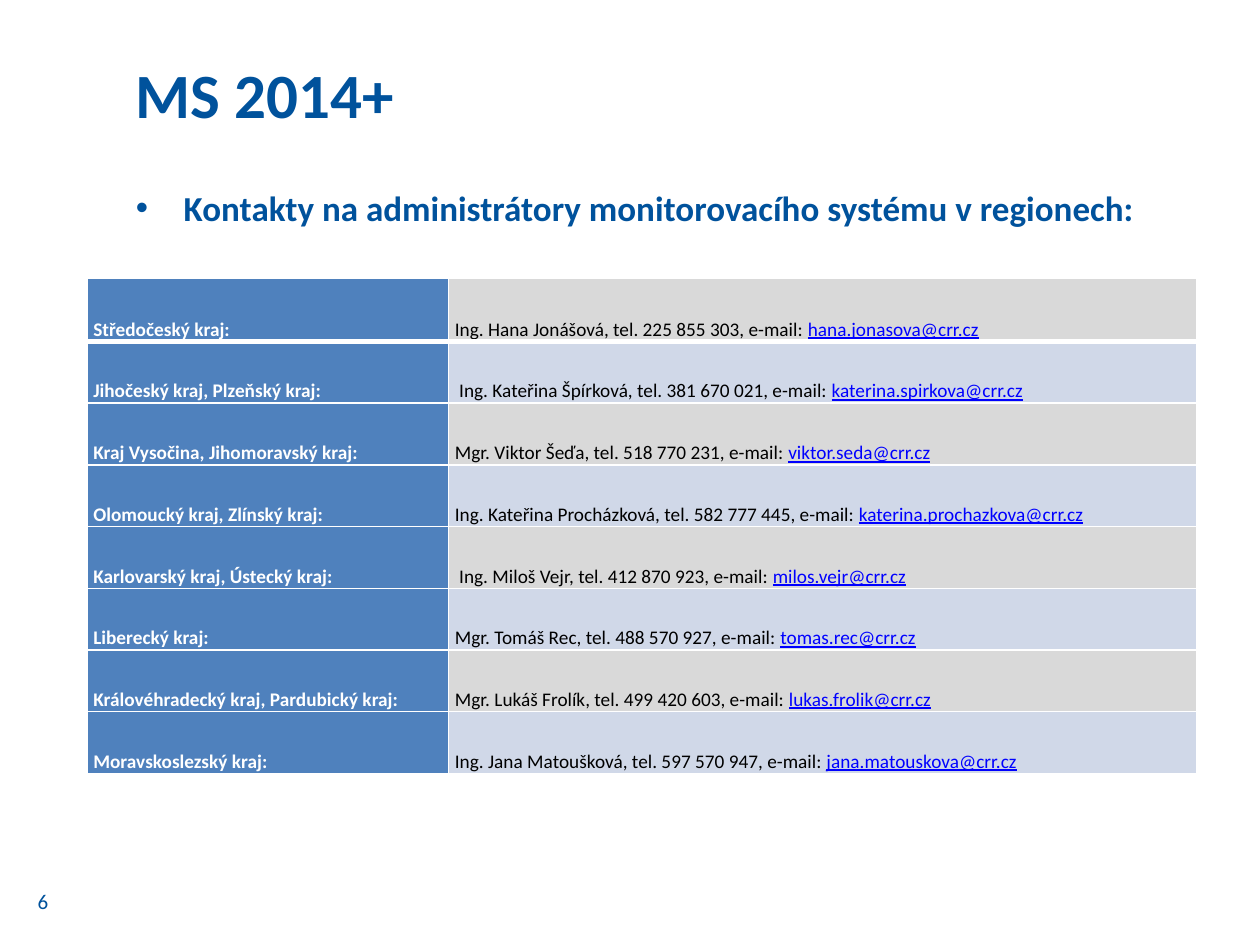
from lxml import etree
from pptx import Presentation, util as u
from pptx.dml.color import RGBColor
from pptx.enum import text
from pptx.oxml.ns import qn

BLUE, WHITE, BLACK, LINK = "00529C", "FFFFFF", "000000", "0000FF"
HEAD_FILL, BANDS = "4F81BD", ("D9D9D9", "D0D8E8")
TITLE = "MS 2014+"
LEAD = "Kontakty na administrátory monitorovacího systému v regionech:"
PAGE_NUMBER = "6"
CONTACTS = [
    ("Středočeský kraj:", "Ing. Hana Jonášová, tel. 225 855 303", "hana.jonasova@crr.cz"),
    ("Jihočeský kraj, Plzeňský kraj:", " Ing. Kateřina Špírková, tel. 381 670 021", "katerina.spirkova@crr.cz"),
    ("Kraj Vysočina, Jihomoravský kraj:", "Mgr. Viktor Šeďa, tel. 518 770 231", "viktor.seda@crr.cz"),
    ("Olomoucký kraj, Zlínský kraj:", "Ing. Kateřina Procházková, tel. 582 777 445", "katerina.prochazkova@crr.cz"),
    ("Karlovarský kraj, Ústecký kraj:", " Ing. Miloš Vejr, tel. 412 870 923", "milos.vejr@crr.cz"),
    ("Liberecký kraj:", "Mgr. Tomáš Rec, tel. 488 570 927", "tomas.rec@crr.cz"),
    ("Královéhradecký kraj, Pardubický kraj:", "Mgr. Lukáš Frolík, tel. 499 420 603", "lukas.frolik@crr.cz"),
    ("Moravskoslezský kraj:", "Ing. Jana Matoušková, tel. 597 570 947", "jana.matouskova@crr.cz"),
]
COLUMNS = (2.87, 5.94)
FIRST_ROW, ROW = 0.5, 0.49


def color(value):
    return RGBColor.from_string(value)


def write(para, words, size=11, fill=BLACK, bold=False, underline=False):
    span = para.add_run()
    span.text = words
    font = span.font
    font.name, font.size, font.bold = "Calibri", u.Pt(size), bold
    font.underline = underline
    font.color.rgb = color(fill)


def add_box(page, left, top, width, height, anchor):
    box = page.shapes.add_textbox(*map(u.Inches, (left, top, width, height)))
    box.text_frame.word_wrap = True
    box.text_frame.vertical_anchor = anchor
    return box.text_frame.paragraphs[0]


def add_bullet(para, indent):
    props = para._p.get_or_add_pPr()
    props.set("marL", str(u.Inches(indent)))
    props.set("indent", str(-u.Inches(indent)))
    etree.SubElement(props, qn("a:buFont")).set("typeface", "Arial")
    etree.SubElement(props, qn("a:buChar")).set("char", "•")


def add_borders(cell, top, bottom):
    props = cell._tc.get_or_add_tcPr()
    for side, width in (("L", 1), ("R", 1), ("T", top), ("B", bottom)):
        line = etree.SubElement(props, qn(f"a:ln{side}"), w=str(u.Pt(width)))
        fill = etree.SubElement(line, qn("a:solidFill"))
        etree.SubElement(fill, qn("a:srgbClr"), val=WHITE)


def add_contacts(page, left, top):
    height = FIRST_ROW + ROW * (len(CONTACTS) - 1)
    table = page.shapes.add_table(
        len(CONTACTS), len(COLUMNS),
        *map(u.Inches, (left, top, sum(COLUMNS), height))).table
    for column, width in zip(table.columns, COLUMNS):
        column.width = u.Inches(width)
    for index, (region, person, mail) in enumerate(CONTACTS):
        table.rows[index].height = u.Inches(ROW if index else FIRST_ROW)
        fills = (HEAD_FILL, BANDS[index % 2])
        for cell, fill in zip(table.rows[index].cells, fills):
            add_borders(cell, 3 if index == 1 else 1, 3 if index == 0 else 1)
            cell.fill.solid()
            cell.fill.fore_color.rgb = color(fill)
            cell.vertical_anchor = text.MSO_ANCHOR.BOTTOM
            cell.margin_left = cell.margin_right = u.Inches(0.05)
            cell.margin_top = cell.margin_bottom = 0
        head, detail = (cell.text_frame.paragraphs[0] for cell in table.rows[index].cells)
        write(head, region, fill=WHITE, bold=True)
        write(detail, f"{person}, e-mail: ")
        write(detail, mail, fill=LINK, underline=True)


def main():
    deck = Presentation()
    deck.slide_width, deck.slide_height = u.Inches(10), u.Inches(7.5)
    page = deck.slides.add_slide(deck.slide_layouts[6])
    middle = text.MSO_ANCHOR.MIDDLE

    lead = add_box(page, 0.98, 1.43, 8.52, 5.27, text.MSO_ANCHOR.TOP)
    lead.space_after = u.Pt(6)
    add_bullet(lead, 0.38)
    write(lead, LEAD, size=20, fill=BLUE, bold=True)
    write(add_box(page, 0.98, 0.29, 8.52, 0.9, middle), TITLE, size=36, fill=BLUE, bold=True)
    write(add_box(page, 0.2, 6.95, 0.55, 0.4, middle), PAGE_NUMBER, size=12, fill=BLUE)
    add_contacts(page, 0.69, 2.21)
    deck.save("out.pptx")


if __name__ == "__main__":
    main()
